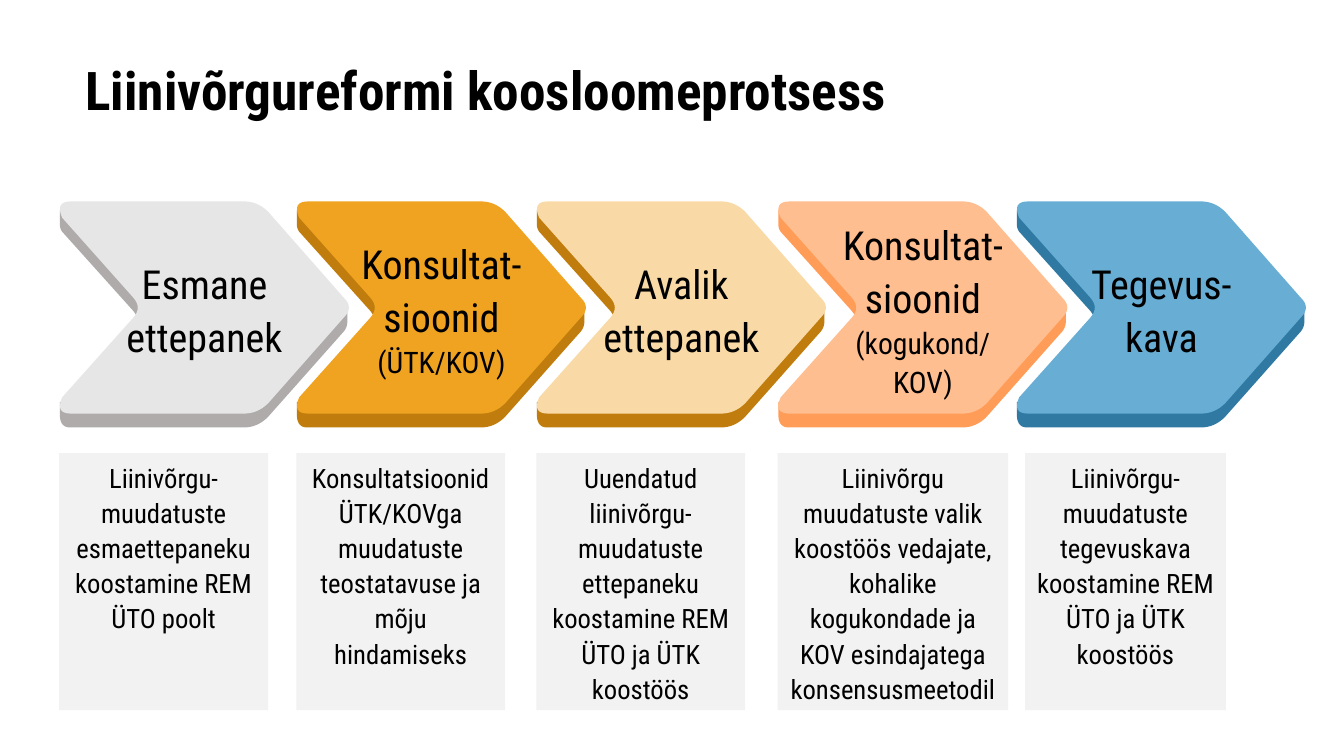
from pptx import Presentation
from pptx.dml.color import RGBColor
from pptx.enum.shapes import MSO_SHAPE
from pptx.enum.text import MSO_ANCHOR, MSO_AUTO_SIZE, PP_ALIGN
from pptx.util import Pt

FONT = "Roboto Condensed"
BLACK = RGBColor(0x00, 0x00, 0x00)
PALE = RGBColor(0xF2, 0xF2, 0xF2)
GREY = RGBColor(0xE7, 0xE6, 0xE6)
STONE = RGBColor(0xAF, 0xAB, 0xAB)
GOLD = RGBColor(0xF0, 0xA3, 0x21)
BRONZE = RGBColor(0xC0, 0x7D, 0x0D)
CREAM = RGBColor(0xF9, 0xDA, 0xA6)
PEACH = RGBColor(0xFF, 0xBE, 0x8F)
CORAL = RGBColor(0xFF, 0x9D, 0x58)
SKY = RGBColor(0x67, 0xAD, 0xD4)
STEEL = RGBColor(0x2F, 0x79, 0xA3)

FACE = [
    [(2, 11), (-3, 0), (8, 0)],
    [(124.5, 0), (134, 0), (141, 7)],
    [(192, 65), (199, 71.7), (192, 78.5)],
    [(141, 136.3), (134, 143.3), (124.5, 143.3)],
    [(8, 143.3), (-3, 143.3), (2, 132.3)],
    [(50, 78.5), (56, 71.7), (50, 65)],
]
SIDE = [
    [(194.5, 70.5)],
    [(188.5, 70.5)],
    [(141, 16.5), (134, 9.4), (124.5, 9.4)],
    [(13.5, 9.4)],
    [(13.5, 5.8)],
    [(0.5, 5.8)],
    [(0.5, 16), (0.5, 18.5), (2, 20.5)],
    [(50, 74), (56, 81), (50, 88)],
    [(7.5, 135.5)],
    [(0.5, 135.5)],
    [(0.5, 145.5), (1, 152.7), (7.5, 152.7)],
    [(124.5, 152.7), (134, 152.7), (141, 145.5)],
    [(192, 88), (194.5, 85), (194.5, 81)],
]

STEPS = [
    (40, GREY, STONE, [("Esmane", 27), ("ettepanek", 27)], 40, 141,
     "Liinivõrgu-muudatuste esmaettepaneku koostamine REM ÜTO poolt"),
    (200, GOLD, BRONZE, [("Konsultat-sioonid", 27), ("(ÜTK/KOV)", 20)], 200, 141,
     "Konsultatsioonid ÜTK/KOVga muudatuste teostatavuse ja mõju hindamiseks"),
    (362, CREAM, BRONZE, [("Avalik", 27), ("ettepanek", 27)], 362, 141,
     "Uuendatud liinivõrgu-muudatuste ettepaneku koostamine REM ÜTO ja ÜTK koostöös"),
    (525, PEACH, CORAL, [("Konsultat-sioonid", 27), ("(kogukond/", 20), ("KOV)", 20)], 525, 155.5,
     "Liinivõrgu muudatuste valik koostöös vedajate, kohalike kogukondade "
     "ja KOV esindajatega konsensusmeetodil"),
    (686, SKY, STEEL, [("Tegevus-", 27), ("kava", 27)], 692, 135.5,
     "Liinivõrgu-muudatuste tegevuskava koostamine REM ÜTO ja ÜTK koostöös"),
]


def write(frame, lines, align, space, bold=False):
    frame.word_wrap = True
    frame.auto_size = MSO_AUTO_SIZE.NONE
    for i, (text, size) in enumerate(lines):
        para = frame.paragraphs[0] if i == 0 else frame.add_paragraph()
        para.alignment = align
        para.line_spacing = space
        run = para.add_run()
        run.text = text
        run.font.name = FONT
        run.font.size = Pt(size)
        run.font.bold = bold
        run.font.color.rgb = BLACK


def paint(shape, tint):
    shape.shadow.inherit = False
    shape.fill.solid()
    shape.fill.fore_color.rgb = tint
    shape.line.fill.background()


def bend(part, count=8):
    if len(part) == 1:
        return part
    (ax, ay), (bx, by), (cx, cy) = part
    spots = []
    for i in range(count + 1):
        t = i / count
        u = 1 - t
        spots.append((u * u * ax + 2 * u * t * bx + t * t * cx,
                      u * u * ay + 2 * u * t * by + t * t * cy))
    return spots


def trace(slide, left, top, parts, tint):
    spots = [(Pt(left + x), Pt(top + y)) for part in parts for x, y in bend(part)]
    pen = slide.shapes.build_freeform(*spots[0])
    pen.add_line_segments(spots[1:], close=True)
    shape = pen.convert_to_shape()
    paint(shape, tint)
    return shape


def add_arrow(slide, left, top, tint, shade, lines):
    trace(slide, left, top, SIDE, shade)
    frame = trace(slide, left, top, FACE, tint).text_frame
    frame.margin_left = frame.margin_right = Pt(14)
    frame.margin_top = frame.margin_bottom = Pt(3)
    frame.vertical_anchor = MSO_ANCHOR.MIDDLE
    write(frame, lines, PP_ALIGN.CENTER, 1.1)


def add_card(slide, left, top, width, height, text):
    card = slide.shapes.add_shape(
        MSO_SHAPE.RECTANGLE, Pt(left), Pt(top), Pt(width), Pt(height))
    paint(card, PALE)
    card.text_frame.vertical_anchor = MSO_ANCHOR.TOP
    write(card.text_frame, [(text, 18)], PP_ALIGN.CENTER, 1.1)


def add_title(slide, left, top, width, height, text):
    title = slide.shapes.title
    title.left, title.top = Pt(left), Pt(top)
    title.width, title.height = Pt(width), Pt(height)
    frame = title.text_frame
    frame.margin_top = Pt(4)
    frame.vertical_anchor = MSO_ANCHOR.TOP
    write(frame, [(text, 36)], PP_ALIGN.LEFT, 0.88, True)


def main():
    deck = Presentation()
    deck.slide_width, deck.slide_height = Pt(907.2), Pt(510.5)
    slide = deck.slides.add_slide(deck.slide_layouts[5])
    add_title(slide, 50.5, 40.5, 798.5, 80.5, "Liinivõrgureformi koosloomeprotsess")
    for left, tint, shade, lines, edge, width, text in STEPS:
        add_arrow(slide, left, 136, tint, shade, lines)
        add_card(slide, edge, 306, width, 173.5, text)
    deck.save("out.pptx")


if __name__ == "__main__":
    main()
